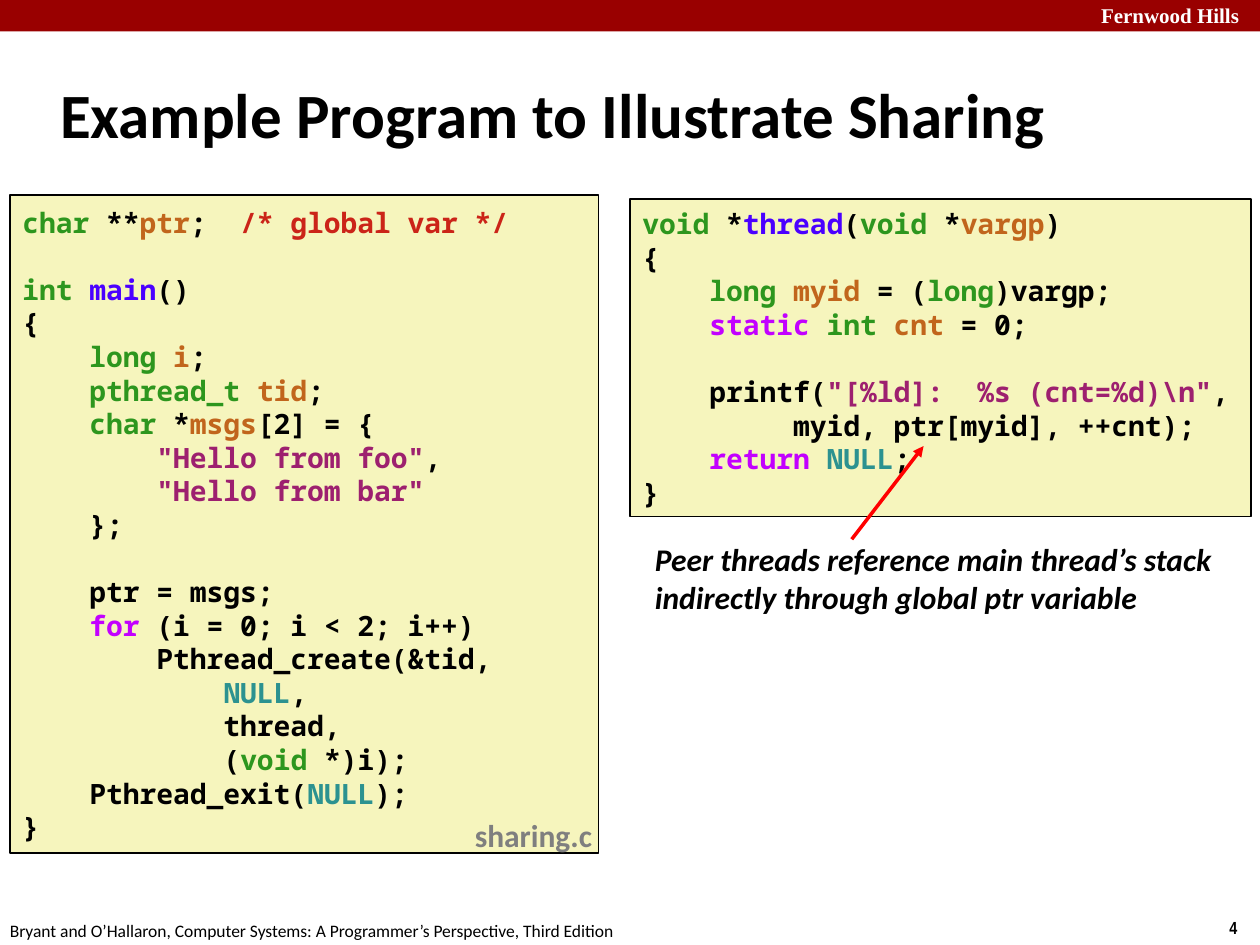
"""Build a slide that shows how threads share variables in a C program."""
from lxml import etree
from pptx import Presentation
from pptx.dml.color import RGBColor
from pptx.enum.shapes import MSO_CONNECTOR, MSO_SHAPE
from pptx.enum.text import MSO_ANCHOR, MSO_AUTO_SIZE, PP_ALIGN
from pptx.oxml.ns import qn
from pptx.text.text import Font
from pptx.util import Inches, Pt

RECTANGLE = MSO_SHAPE.RECTANGLE
STRAIGHT = MSO_CONNECTOR.STRAIGHT
TOP, MIDDLE = MSO_ANCHOR.TOP, MSO_ANCHOR.MIDDLE
FIT, FIXED = MSO_AUTO_SIZE.SHAPE_TO_FIT_TEXT, MSO_AUTO_SIZE.NONE
LEFT = PP_ALIGN.LEFT

COLORS = {
    "plain": "000000", "type": "2D961E", "variable": "C1651C",
    "comment": "CB2418", "function": "4A00FF", "string": "9D206F",
    "keyword": "C200FF", "constant": "2C9290", "paper": "F6F5BD",
    "banner": "990000", "white": "FFFFFF", "gray": "7F7F7F", "arrow": "FF0000",
}

MAIN_PROGRAM = [
    [("char", "type"), " **", ("ptr", "variable"), ";  ",
     ("/* global var */", "comment")],
    [],
    [("int ", "type"), ("main", "function"), "()"],
    ["{"],
    ["    ", ("long ", "type"), ("i", "variable"), ";"],
    ["    ", ("pthread_t ", "type"), ("tid", "variable"), ";"],
    ["    ", ("char", "type"), " *", ("msgs", "variable"), "[2] = {"],
    ["        ", ('"Hello from foo"', "string"), ","],
    ["        ", ('"Hello from bar"', "string")],
    ["    };"],
    [],
    ["    ptr = msgs;"],
    ["    ", ("for", "keyword"), " (i = 0; i < 2; i++)"],
    ["        Pthread_create(&tid,"],
    ["            ", ("NULL", "constant"), ","],
    ["            thread,"],
    ["            (", ("void", "type"), " *)i);"],
    ["    Pthread_exit(", ("NULL", "constant"), ");"],
    ["}"],
]
THREAD_ROUTINE = [
    [("void", "type"), " *", ("thread", "function"), "(", ("void", "type"),
     " *", ("vargp", "variable"), ")"],
    ["{"],
    ["    ", ("long ", "type"), ("myid", "variable"), " = (",
     ("long", "type"), ")vargp;"],
    ["    ", ("static ", "keyword"), ("int ", "type"), ("cnt", "variable"),
     " = 0;"],
    [],
    ["    printf(", ('"[%ld]:  %s (cnt=%d)\\n"', "string"), ","],
    ["         myid, ptr[myid], ++cnt);"],
    ["    ", ("return ", "keyword"), ("NULL", "constant"), ";"],
    ["}"],
]
REMARK = [["Peer threads reference main thread’s stack"],
          ["indirectly through global ptr variable"]]
FOOTER = [["Bryant and O’Hallaron, Computer Systems: "
           "A Programmer’s Perspective, Third Edition"]]

CODE_FONT = {"name": "Noto Sans Mono", "size": Pt(16), "bold": True}
TITLE_FONT = {"name": "Calibri", "size": Pt(36), "bold": True}
LABEL_FONT = {"name": "Calibri", "size": Pt(18), "bold": True}
REMARK_FONT = {**LABEL_FONT, "italic": True}
FOOTER_FONT = {"name": "Calibri", "size": Pt(10)}
NUMBER_FONT = {"name": "Arial Narrow", "size": Pt(10), "bold": True}
SCHOOL_FONT = {"name": "Times New Roman", "size": Pt(12), "bold": True}

SNUG = {"word_wrap": False, "auto_size": FIT}
WRAPPED = {"word_wrap": True, "auto_size": FIT}
REMARK_FRAME = {**SNUG, "vertical_anchor": MIDDLE,
                "margin_top": 0, "margin_bottom": 0}
TITLE_FRAME = {"word_wrap": True, "auto_size": FIXED, "vertical_anchor": MIDDLE}

# Places are left, top, width and height in percent of the slide.
BANNER = (0, 0, 100, 3.33)
CODE_PANELS = [
    (MAIN_PROGRAM, (0.8, 20.67, 46.7, 69.6), WRAPPED),
    (THREAD_ROUTINE, (50, 21.07, 49.3, 33.6), SNUG),
]
LABELS = [
    ([["Fernwood Hills"]], (86.4, -0.4, 14.3, 4), SCHOOL_FONT, "white",
     {**SNUG, "auto_size": FIXED}),
    ([["4"]], (96.6, 96.4, 3.4, 3.6), NUMBER_FONT, "plain", SNUG),
    (FOOTER, (-0.2, 96.67, 50.8, 3.6), FOOTER_FONT, "plain", SNUG),
    ([["Example Program to Illustrate Sharing"]], (3.8, 6.4, 93, 11.07),
     TITLE_FONT, "plain", TITLE_FRAME),
    (REMARK, (51, 57.07, 47.3, 8.13), REMARK_FONT, "plain", REMARK_FRAME),
    ([["sharing.c"]], (36.7, 85.73, 11.4, 5.33), LABEL_FONT, "gray", SNUG),
]
ARROW = (67.6, 57.07, 73.3, 47.2)

deck = Presentation()
deck.slide_width, deck.slide_height = Inches(10), Inches(7.5)
slide = deck.slides.add_slide(deck.slide_layouts[6])
shapes = slide.shapes


def place(percents):
    sides = (deck.slide_width, deck.slide_height) * 2
    return [round(side * share / 100) for side, share in zip(sides, percents)]


def color(name):
    return RGBColor.from_string(COLORS[name])


def apply(target, values):
    for key, value in values.items():
        setattr(target, key, value)


def write(frame, lines, font, ink, layout):
    apply(frame, layout)
    for number, line in enumerate(lines):
        paragraph = frame.add_paragraph() if number else frame.paragraphs[0]
        paragraph.alignment = LEFT
        for token in line:
            text, kind = (token, ink) if isinstance(token, str) else token
            run = paragraph.add_run()
            run.text = text
            apply(run.font, font)
            run.font.color.rgb = color(kind)
        if not line:
            apply(Font(paragraph._p.get_or_add_endParaRPr()), font)


def add_panel(percents, fill):
    panel = shapes.add_shape(RECTANGLE, *place(percents))
    panel.shadow.inherit = False
    panel.fill.solid()
    panel.fill.fore_color.rgb = color(fill)
    panel.line.fill.background()
    return panel


add_panel(BANNER, "banner")
for code, spot, layout in CODE_PANELS:
    panel = add_panel(spot, "paper")
    panel.line.color.rgb = color("plain")
    panel.line.width = Pt(1)
    write(panel.text_frame, code, CODE_FONT, "plain",
          {**layout, "vertical_anchor": MIDDLE})

for lines, spot, font, ink, layout in LABELS:
    label = shapes.add_textbox(*place(spot))
    write(label.text_frame, lines, font, ink, {"vertical_anchor": TOP, **layout})

arrow = shapes.add_connector(STRAIGHT, *place(ARROW))
arrow.line.color.rgb = color("arrow")
arrow.line.width = Pt(2)
etree.SubElement(arrow.line._get_or_add_ln(), qn("a:tailEnd"), type="triangle")
etree.SubElement(arrow._element.spPr, qn("a:effectLst"))

deck.save("out.pptx")
